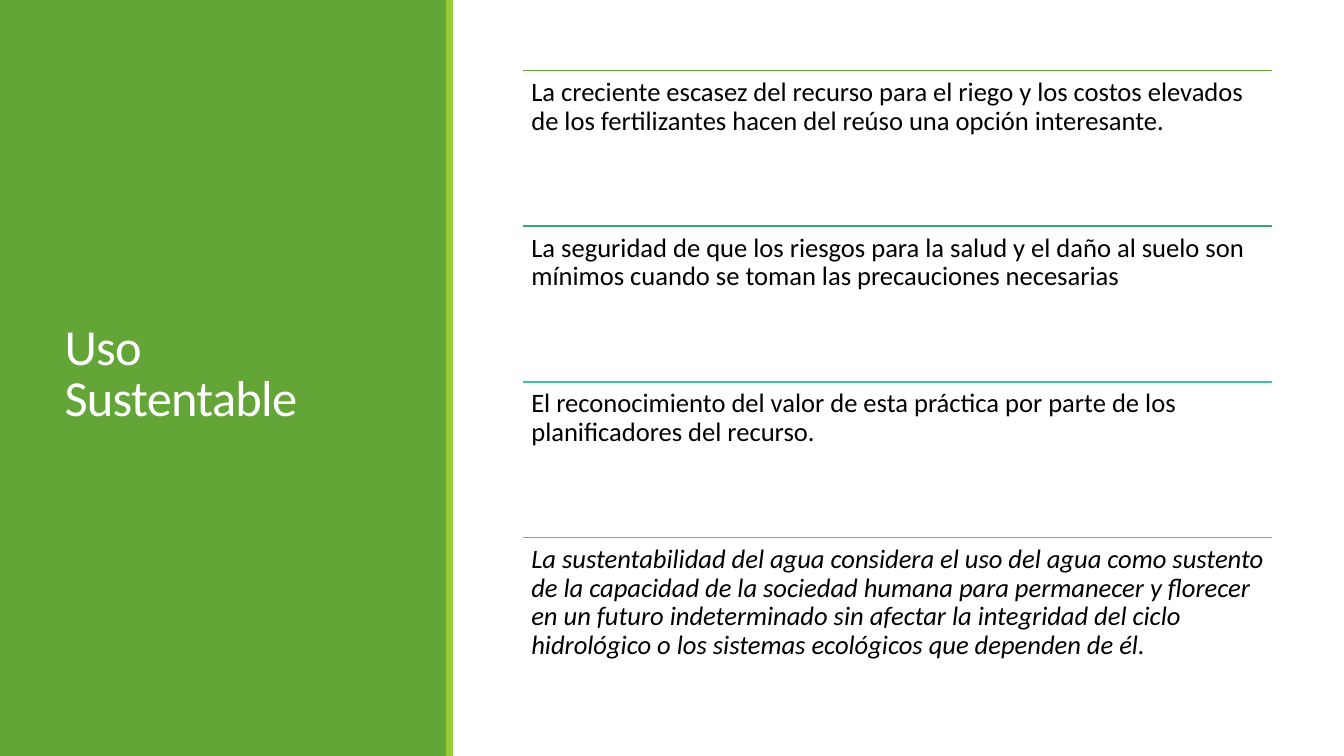
from pptx import Presentation
from pptx.dml.color import RGBColor
from pptx.enum.shapes import MSO_CONNECTOR as Connector, MSO_SHAPE as Preset
from pptx.enum.text import MSO_ANCHOR as Anchor, MSO_AUTO_SIZE as AutoSize, PP_ALIGN as Align
from pptx.oxml.ns import qn
from pptx.util import Inches, Pt
from lxml.etree import SubElement

WIDTH, HEIGHT = 13.33, 7.5
SIDEBAR_WIDTH, STRIPE_WIDTH = WIDTH / 3, 0.07
LIST_LEFT, LIST_TOP, LIST_WIDTH, ROW_HEIGHT = 5.19, 0.7, 7.43, 1.544
GREEN, LIME = "63A537", "99CB38"
TITLE_FONT = {"name": "Calibri", "size": Pt(36), "bold": False}
BODY_FONT = {"name": "Calibri", "size": Pt(19)}
TITLE_FRAME = {"word_wrap": True, "auto_size": AutoSize.NONE, "vertical_anchor": Anchor.MIDDLE}
BODY_FRAME = {"word_wrap": True, "vertical_anchor": Anchor.TOP}
BODY_FRAME.update({f"margin_{side}": Inches(0.08) for side in ("left", "top", "right", "bottom")})
TITLE_PARAGRAPH = {"alignment": Align.LEFT, "line_spacing": 0.85, "space_after": Pt(6)}
BODY_PARAGRAPH = {"alignment": Align.LEFT, "line_spacing": 0.9}
ITEMS = [
    ("63A537", "La creciente escasez del recurso para el riego y los costos elevados "
     "de los fertilizantes hacen del reúso una opción interesante.", False),
    ("37A76F", "La seguridad de que los riesgos para la salud y el daño al suelo son "
     "mínimos cuando se toman las precauciones necesarias", False),
    ("44C1A3", "El reconocimiento del valor de esta práctica por parte de los "
     "planificadores del recurso.", False),
    ("4EB3CF", "La sustentabilidad del agua considera el uso del agua como sustento "
     "de la capacidad de la sociedad humana para permanecer y florecer en un futuro "
     "indeterminado sin afectar la integridad del ciclo hidrológico o los sistemas "
     "ecológicos que dependen de él.", True),
]


def set_color(target, color):
    """Apply a hex colour to a font, fill or line colour."""
    target.rgb = RGBColor.from_string(color)


def apply(target, values):
    """Set every attribute listed in a dict of format values."""
    for name, value in values.items():
        setattr(target, name, value)


def write_text(frame, text, formats, color):
    """Write one formatted paragraph and return its run."""
    frame_values, paragraph_values, font_values = formats
    apply(frame, frame_values)
    paragraph = frame.paragraphs[0]
    apply(paragraph, paragraph_values)
    run = paragraph.add_run()
    run.text = text
    apply(run.font, font_values)
    set_color(run.font.color, color)
    return run


def add_band(slide, left, width, color):
    """Add a plain band over the full slide height."""
    band = slide.shapes.add_shape(Preset.RECTANGLE, Inches(left), 0, Inches(width), Inches(HEIGHT))
    band.shadow.inherit = False
    band.fill.solid()
    set_color(band.fill.fore_color, color)
    band.line.fill.background()


def add_title(slide, text):
    """Place the title on the sidebar, in front of it."""
    title = slide.shapes.title
    apply(title, {"left": Inches(0.54), "top": Inches(0.57),
                  "width": Inches(3.37), "height": Inches(6.31)})
    run = write_text(title.text_frame, text, (TITLE_FRAME, TITLE_PARAGRAPH, TITLE_FONT), "FFFFFF")
    run.font._element.set("spc", "-50")
    slide.shapes.element.append(title.element)


def add_item(slide, row, color, text, italic):
    """Add a coloured rule with its statement below."""
    left, top, width = Inches(LIST_LEFT), Inches(LIST_TOP + row * ROW_HEIGHT), Inches(LIST_WIDTH)
    rule = slide.shapes.add_connector(Connector.STRAIGHT, left, top, left + width, top)
    rule.line.width = Pt(1.25)
    set_color(rule.line.color, color)
    SubElement(rule.element.spPr, qn("a:effectLst"))
    box = slide.shapes.add_textbox(left, top, width, Inches(ROW_HEIGHT))
    font = {**BODY_FONT, "italic": italic}
    write_text(box.text_frame, text, (BODY_FRAME, BODY_PARAGRAPH, font), "000000")


def main():
    """Build the slide and save the presentation."""
    presentation = Presentation()
    presentation.slide_width, presentation.slide_height = Inches(WIDTH), Inches(HEIGHT)
    slide = presentation.slides.add_slide(presentation.slide_layouts[5])
    add_band(slide, 0, SIDEBAR_WIDTH, GREEN)
    add_band(slide, SIDEBAR_WIDTH - 0.02, STRIPE_WIDTH, LIME)
    add_title(slide, "Uso Sustentable")
    for row, item in enumerate(ITEMS):
        add_item(slide, row, *item)
    presentation.save("out.pptx")


if __name__ == "__main__":
    main()
